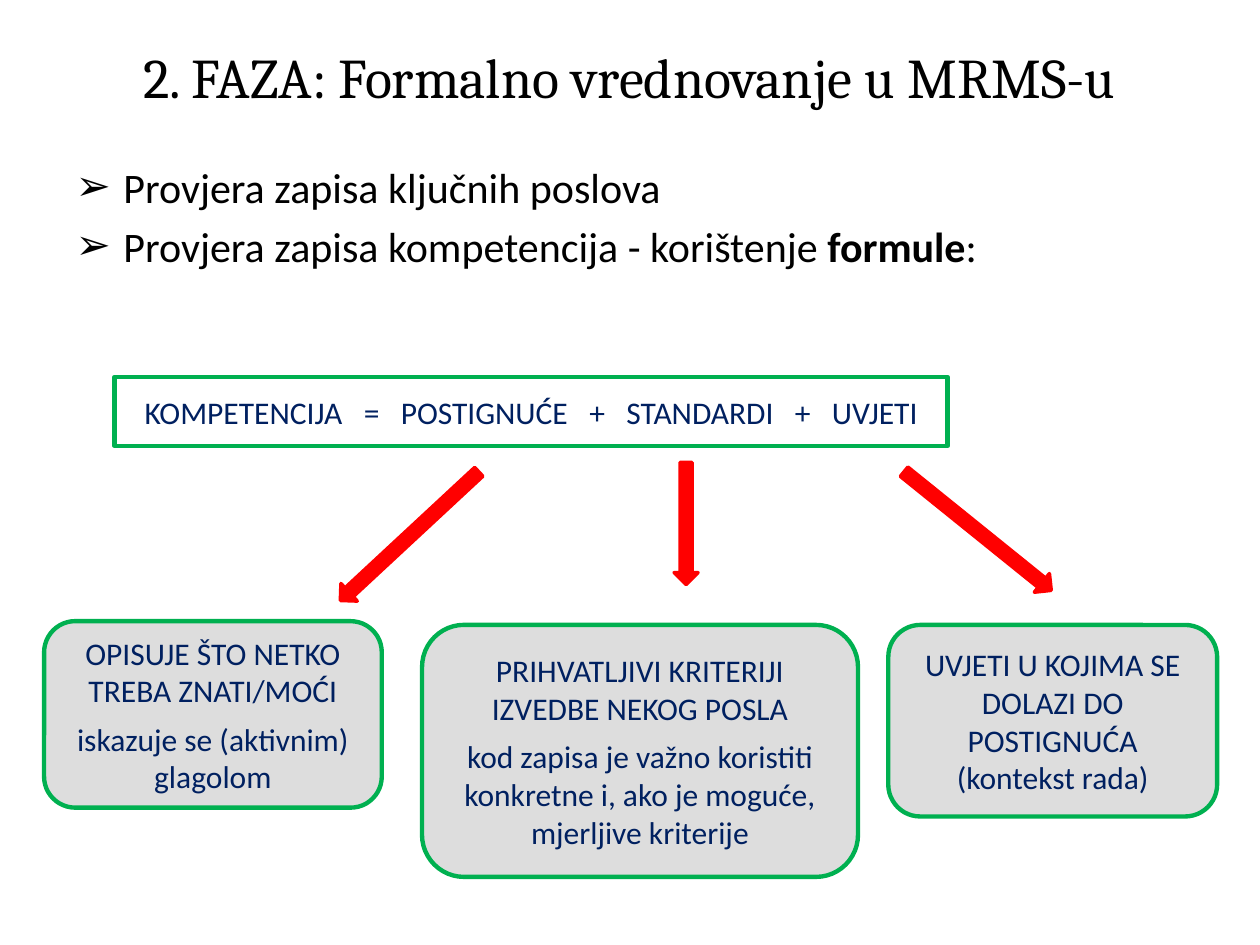
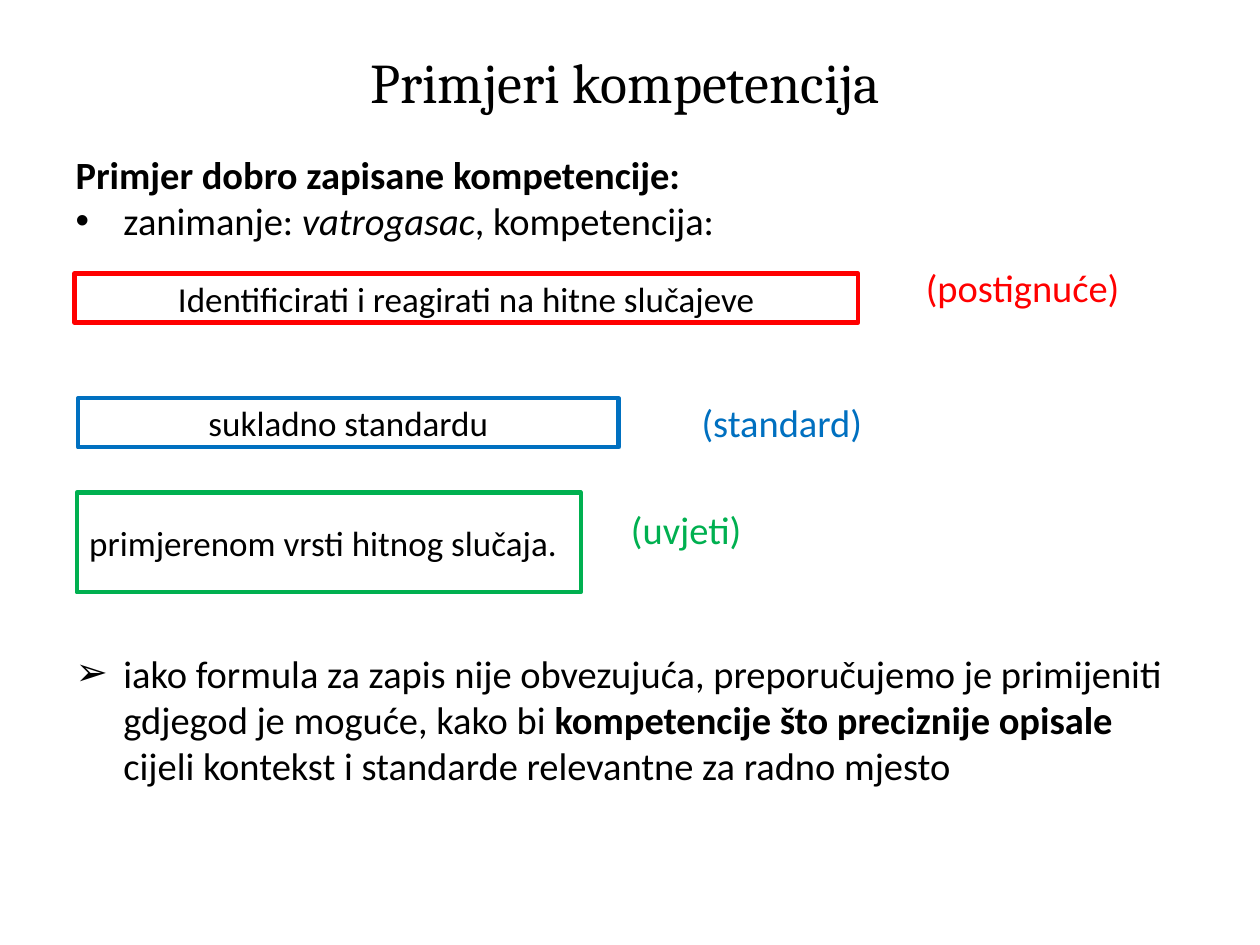
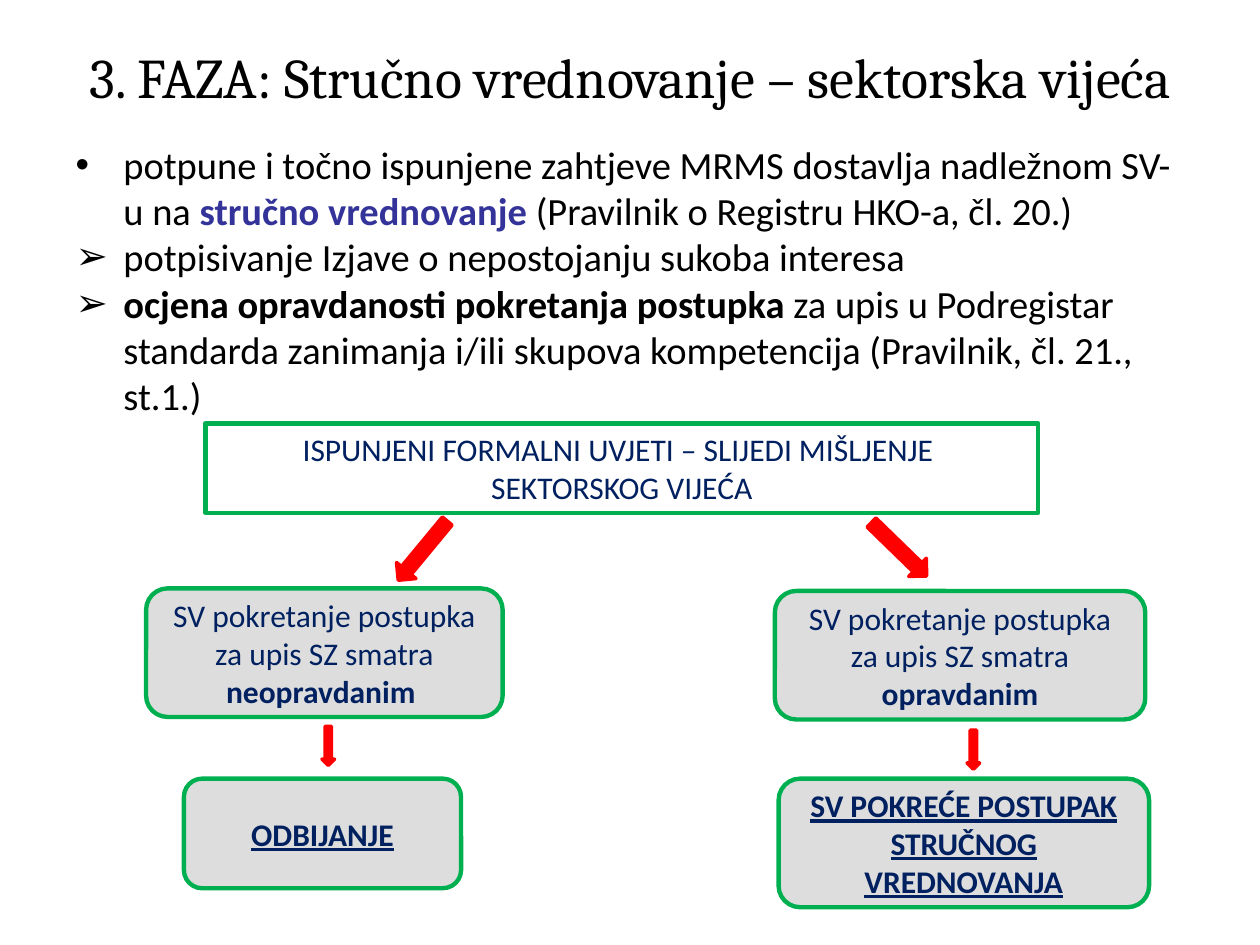
from lxml import etree
from pptx import Presentation
from pptx.dml.color import RGBColor
from pptx.enum import shapes, text
from pptx.oxml import ns
from pptx.util import Inches, Pt

# Shared look
hue = RGBColor.from_string
BLACK, NAVY, VIOLET = "000000", "002060", "333399"
GREEN, RED, BLUE = "00B050", "FF0000", "0070C0"
GREY, WHITE = "DDDDDD", "FFFFFF"
RECT = shapes.MSO_SHAPE.RECTANGLE
ROUND = shapes.MSO_SHAPE.ROUNDED_RECTANGLE
ARROW = shapes.MSO_SHAPE.RIGHT_ARROW
MID, LEFT = text.PP_ALIGN.CENTER, text.PP_ALIGN.LEFT


def write(frame, paras, size, tint=BLACK, align=LEFT, face="Calibri"):
    """Each paragraph is (runs, space before, bullet); runs are (text, style)."""
    frame.word_wrap = True
    frame.auto_size = text.MSO_AUTO_SIZE.NONE
    for i, (runs, gap, mark) in enumerate(paras):
        para = frame.paragraphs[0] if i == 0 else frame.add_paragraph()
        para.alignment = align
        para.space_before = Pt(gap)
        props = para._p.get_or_add_pPr()
        indent = Inches(0.38) if mark else 0
        props.set("marL", str(indent))
        props.set("indent", str(-indent))
        if mark:
            etree.SubElement(props, ns.qn("a:buFont"), typeface="Arial")
            etree.SubElement(props, ns.qn("a:buChar"), char=mark)
        else:
            etree.SubElement(props, ns.qn("a:buNone"))
        font = para.font
        font.name, font.size, font.color.rgb = face, Pt(size), hue(tint)
        for words, style in runs:
            run = para.add_run()
            run.text = words
            if "b" in style:
                run.font.bold = True
            if "i" in style:
                run.font.italic = True
            if "u" in style:
                run.font.underline = True
            if "v" in style:
                run.font.color.rgb = hue(VIOLET)
            if "w" in style:  # wide letter spacing
                run._r.get_or_add_rPr().set("spc", "810")


def draw(slide, kind, spot, edge, fill=None, width=2.5, turn=0):
    shape = slide.shapes.add_shape(kind, *map(Inches, spot))
    shape.shadow.inherit = False
    shape.rotation = turn
    shape.line.color.rgb = hue(edge)
    shape.line.width = Pt(width)
    if fill:
        shape.fill.solid()
        shape.fill.fore_color.rgb = hue(fill)
    else:
        shape.fill.background()
    shape.text_frame.vertical_anchor = text.MSO_ANCHOR.MIDDLE
    return shape


deck = Presentation()
deck.slide_width, deck.slide_height = Inches(10), Inches(7.5)

# Titles and lists: title, title place, body top, body size, paragraphs
pages = [
    ("2. FAZA: Formalno vrednovanje u MRMS-u", (0.5, 0.3, 9, 0.61), 1.23, 24, [
        ([("Provjera zapisa ključnih poslova", "")], 0, "➢"),
        ([("Provjera zapisa kompetencija - korištenje ", ""),
          ("formule", "b"), (":", "")], 4.8, "➢")]),
    ("Primjeri kompetencija", (0.28, 0.3, 9.37, 0.69), 1.15, 22, [
        ([("Primjer dobro zapisane kompetencije:", "b")], 0, None),
        ([("zanimanje: ", ""), ("vatrogasac", "i"),
          (", kompetencija:", "")], 0, "•"),
        ([("iako formula za zapis nije obvezujuća, preporučujemo je "
           "primijeniti gdjegod je moguće, kako bi ", ""),
          ("kompetencije što preciznije opisale ", "b"),
          ("cijeli kontekst i standarde relevantne za radno mjesto", "")],
         232, "➢")]),
    ("3. FAZA: Stručno vrednovanje – sektorska vijeća",
     (0.28, 0.3, 9.45, 0.61), 1.07, 22, [
         ([("potpune i točno ispunjene zahtjeve MRMS dostavlja nadležnom "
            "SV-u na ", ""), ("stručno vrednovanje ", "bv"),
           ("(Pravilnik o Registru HKO-a, čl. 20.)", "")], 0, "•"),
         ([("potpisivanje Izjave o nepostojanju sukoba interesa", "")], 0, "➢"),
         ([("ocjena opravdanosti pokretanja postupka ", "b"),
           ("za upis u Podregistar standarda zanimanja i/ili skupova "
            "kompetencija (Pravilnik, čl. 21., st.1.)", "")], 0, "➢")]),
]
for name, spot, top, size, paras in pages:
    slide = deck.slides.add_slide(deck.slide_layouts[1])
    title, body = slide.placeholders
    title.left, title.top, title.width, title.height = map(Inches, spot)
    write(title.text_frame, [([(name, "")], 0, None)], 32, align=MID, face="Cambria")
    body.left, body.top = Inches(0.5), Inches(top)
    body.width, body.height = Inches(9), Inches(7.12 - top)
    write(body.text_frame, paras, size)
phase, sample, expert = deck.slides

# Formula, with widened spaces between its terms
rule = draw(phase, RECT, (0.91, 2.99, 6.61, 0.55), GREEN)
runs = [("KOMPETENCIJA", "")]
for term in ("=", "POSTIGNUĆE", "+", "STANDARDI", "+", "UVJETI"):
    runs += [(" ", "w"), (term, "")]
write(rule.text_frame, [(runs, 0, None)], 18, NAVY, MID)

# Flow boxes
head = draw(expert, RECT, (1.63, 3.36, 6.61, 0.71), GREEN)
write(head.text_frame, [
    ([("ISPUNJENI FORMALNI UVJETI – SLIJEDI MIŠLJENJE ", "")], 0, None),
    ([("SEKTORSKOG VIJEĆA", "")], 0, None)], 18, NAVY, MID)
verdict = "SV pokretanje postupka za upis SZ smatra "
cards = [
    (phase, (0.35, 4.93, 2.68, 1.48), [
        ([("OPISUJE ŠTO NETKO TREBA ZNATI/MOĆI", "")], 0, None),
        ([("iskazuje se (aktivnim) glagolom", "")], 6, None)]),
    (phase, (3.35, 4.96, 3.46, 2), [
        ([("PRIHVATLJIVI KRITERIJI IZVEDBE NEKOG POSLA", "")], 0, None),
        ([("kod zapisa je važno koristiti konkretne i, ako je moguće, "
           "mjerljive kriterije", "")], 6, None)]),
    (phase, (7.05, 4.96, 2.61, 1.52), [
        ([("UVJETI U KOJIMA SE DOLAZI DO POSTIGNUĆA (kontekst rada)", "")], 0, None)]),
    (expert, (1.16, 4.67, 2.83, 1.02), [
        ([(verdict, ""), ("neopravdanim ", "b")], 0, None)]),
    (expert, (6.15, 4.69, 2.94, 1.02), [
        ([(verdict, ""), ("opravdanim", "b")], 0, None)]),
    (expert, (1.46, 6.18, 2.2, 0.87), [([("ODBIJANJE", "bu")], 0, None)]),
    (expert, (6.18, 6.18, 2.94, 1.02), [
        ([("SV POKREĆE POSTUPAK STRUČNOG VREDNOVANJA", "bu")], 0, None)]),
]
for slide, spot, paras in cards:
    card = draw(slide, ROUND, spot, GREEN, GREY)
    write(card.text_frame, paras, 18, NAVY, MID)

# Arrows
arrows = [
    (phase, (2.5, 4.16, 1.5, 0.19), 137.1),
    (phase, (7.01, 4.12, 1.5, 0.19), 38.9),
    (phase, (4.96, 4.06, 0.97, 0.19), 90),
    (expert, (3.05, 4.27, 0.61, 0.2), 129.6),
    (expert, (6.83, 4.26, 0.61, 0.2), 44.2),
    (expert, (2.45, 5.87, 0.31, 0.1), 90),
    (expert, (7.57, 5.9, 0.31, 0.1), 90),
]
for slide, spot, turn in arrows:
    draw(slide, ARROW, spot, RED, RED, 2, turn)

# Sample competence: each part with its label
parts = [
    ("Identificirati i reagirati na hitne slučajeve", (0.59, 2.17, 6.22, 0.39),
     MID, RED, "(postignuće)", (7.25, 2.05)),
    ("sukladno standardu", (0.62, 3.16, 4.29, 0.39),
     MID, BLUE, "(standard)", (5.47, 3.12)),
    ("primjerenom vrsti hitnog slučaja.", (0.61, 3.91, 4, 0.79),
     LEFT, GREEN, "(uvjeti)", (4.91, 3.97)),
]
for words, spot, align, tint, label, place in parts:
    part = draw(sample, RECT, spot, tint, WHITE)
    write(part.text_frame, [([(words, "")], 0, None)], 20, align=align)
    note = sample.shapes.add_textbox(*map(Inches, (*place, 2.2, 0.47)))
    write(note.text_frame, [([(label, "")], 0, None)], 22, tint)

deck.save("out.pptx")
